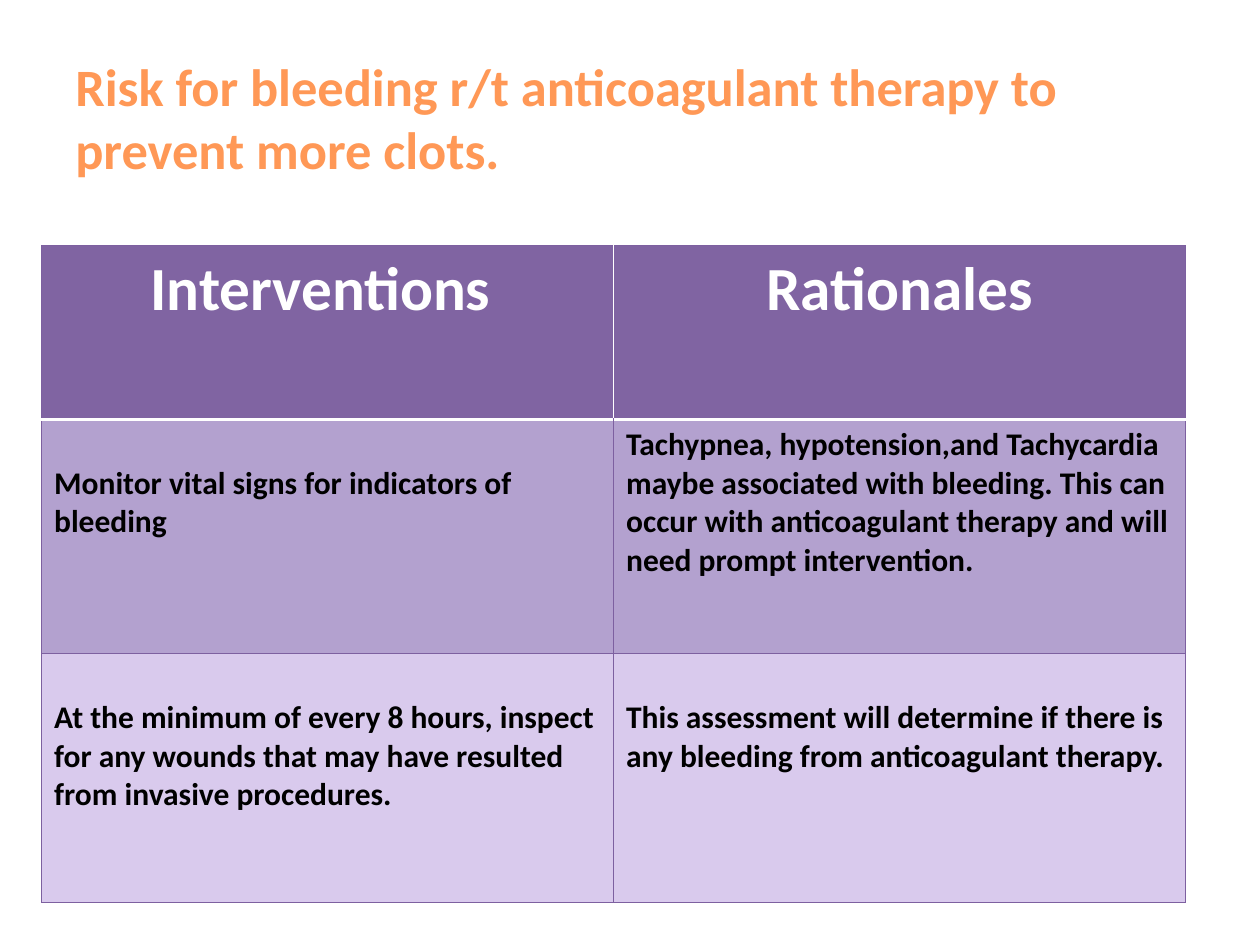
from lxml.etree import SubElement
from pptx import Presentation
from pptx.dml.color import RGBColor as RGB
from pptx.enum.text import MSO_ANCHOR as Anchor, PP_ALIGN as Align
from pptx.oxml.ns import qn
from pptx.util import Inches, Pt

ORANGE = RGB(0xFF, 0x98, 0x56)
PURPLE = RGB(0x80, 0x64, 0xA2)
MID = RGB(0xB3, 0xA1, 0xCF)
PALE = RGB(0xD9, 0xCA, 0xED)
EDGE = RGB(0x7D, 0x60, 0xA0)
WHITE = RGB(0xFF, 0xFF, 0xFF)
BLACK = RGB(0, 0, 0)

TITLE = "Risk for bleeding r/t anticoagulant therapy to prevent more clots."
HEADS = ["Interventions ", "Rationales"]
VITALS = [
    "Monitor vital signs for indicators of bleeding",
    "Tachypnea, hypotension,and Tachycardia maybe associated with bleeding. "
    "This can occur with anticoagulant therapy and will need prompt intervention.",
]
WOUNDS = [
    "At the minimum of every 8 hours, inspect for any wounds that may have "
    "resulted from invasive procedures.",
    "This assessment will determine if there is any bleeding from "
    "anticoagulant therapy.",
]


class Deck:
    """Style and current slide; lengths count cells of a 100 by 75 grid."""

    font = "Calibri"
    cols, rows = 100, 75

    def __init__(self):
        self.prs = Presentation()
        self.prs.slide_width, self.prs.slide_height = Inches(10), Inches(7.5)
        self.slide = self.prs.slides.add_slide(self.prs.slide_layouts[6])

    def x(self, n):
        return round(self.prs.slide_width * n / self.cols)

    def y(self, n):
        return round(self.prs.slide_height * n / self.rows)

    def label(self, frame, text, size, color, align=Align.LEFT):
        frame.word_wrap = True
        frame.text = text
        para = frame.paragraphs[0]
        para.alignment = align
        font = para.runs[0].font
        font.name, font.size, font.bold = self.font, Pt(size), True
        font.color.rgb = color

    def title(self, text, left, top, width, height):
        box = self.slide.shapes.add_textbox(
            self.x(left), self.y(top), self.x(width), self.y(height))
        box.text_frame.vertical_anchor = Anchor.MIDDLE
        self.label(box.text_frame, text, 30, ORANGE)

    def table(self, left, top, widths, heights):
        table = self.slide.shapes.add_table(
            len(heights), len(widths), self.x(left), self.y(top),
            self.x(sum(widths)), self.y(sum(heights))).table
        for col, width in zip(table.columns, widths):
            col.width = self.x(width)
        for row, height in zip(table.rows, heights):
            row.height = self.y(height)
        return table

    def cell(self, cell, text, size, color, fill, edges, align=Align.LEFT, drop=0):
        """Fill one cell; drop lowers its text by that many grid rows."""
        self.label(cell.text_frame, text, size, color, align)
        cell.margin_top = Inches(0.05) + self.y(drop)
        for side in "LRTB":
            if side in edges:
                self.edge(cell, side, *edges[side])
        cell.fill.solid()
        cell.fill.fore_color.rgb = fill

    def edge(self, cell, side, color, width):
        props = cell._tc.get_or_add_tcPr()
        line = SubElement(props, qn(f"a:ln{side}"), w=str(Pt(width)))
        fill = SubElement(line, qn("a:solidFill"))
        SubElement(fill, qn("a:srgbClr"), val=str(color))


def main():
    deck = Deck()
    deck.title(TITLE, 5, 3, 90, 12.5)
    table = deck.table(3.3, 19.5, [45.4] * 2, [13.8, 18.6, 19.7])

    thin, rule = (EDGE, 0.75), (WHITE, 2)
    for col, (text, side) in enumerate(zip(HEADS, "LR")):
        deck.cell(table.cell(0, col), text, 35, WHITE, PURPLE,
                  {side: thin, "T": thin, "B": rule}, Align.CENTER)

    body = [(VITALS, MID, rule, (3.05, 0)), (WOUNDS, PALE, thin, (3.05, 3.05))]
    for row, (texts, fill, top, drops) in enumerate(body, 1):
        edges = {**dict.fromkeys("LRB", thin), "T": top}
        for col, (text, drop) in enumerate(zip(texts, drops)):
            deck.cell(table.cell(row, col), text, 18, BLACK, fill, edges, drop=drop)

    deck.prs.save("out.pptx")


if __name__ == "__main__":
    main()
